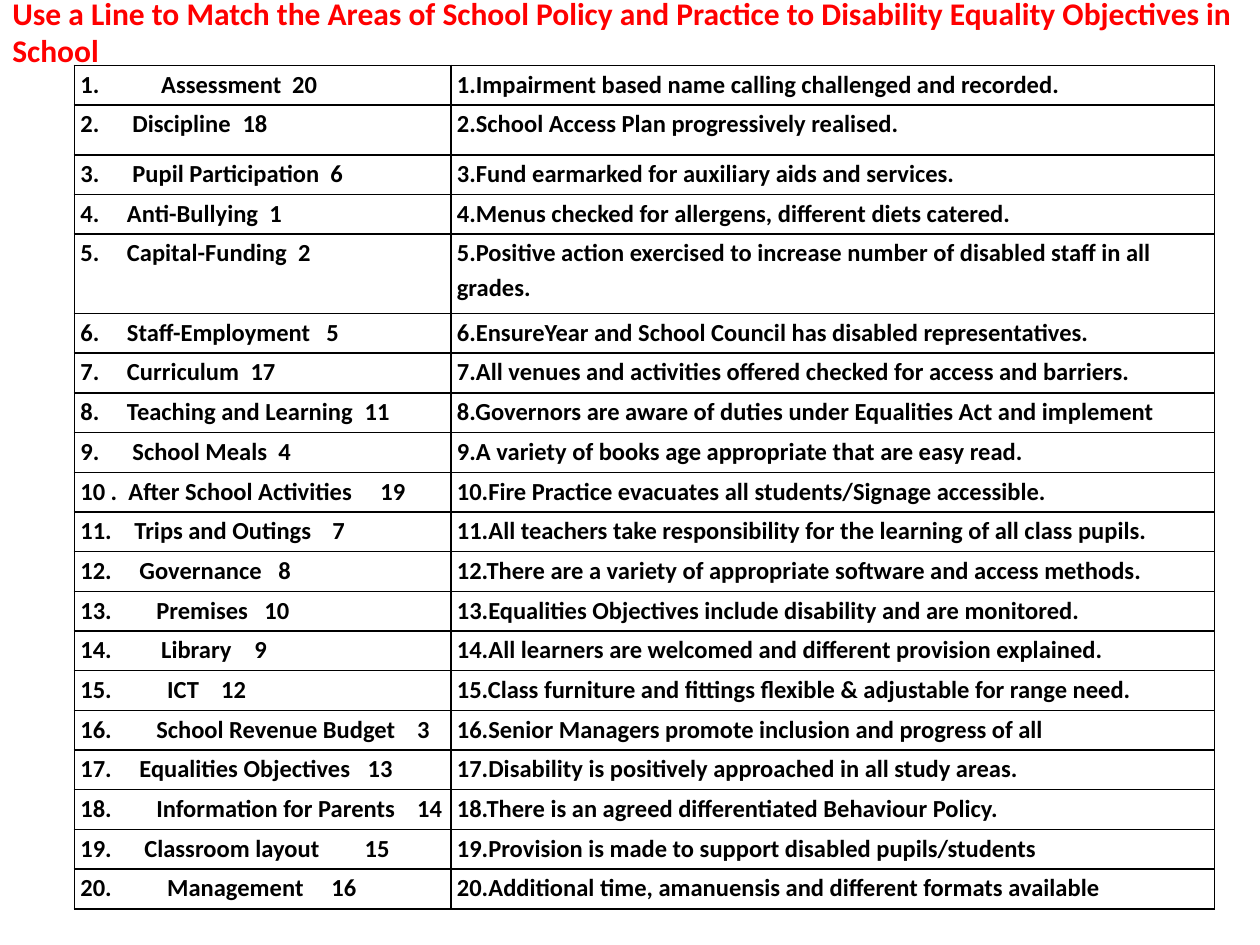
from lxml import etree
from pptx import Presentation
from pptx.dml.color import RGBColor
from pptx.enum.text import MSO_ANCHOR, MSO_AUTO_SIZE
from pptx.oxml.ns import qn
from pptx.util import Cm, Pt

MIDDLE = MSO_ANCHOR.MIDDLE
NO_AUTOFIT = MSO_AUTO_SIZE.NONE

BLACK, RED = "000000", "FF0000"
COLUMN_WIDTHS = (7.59, 15.39)
ROW_HEIGHT = 0.8
TALL_ROWS = {2: 1.0, 5: 1.6}
CELL_FORMAT = {"margin_left": Cm(0.12), "margin_right": Cm(0.12),
               "margin_top": 0, "margin_bottom": 0}
TITLE_FORMAT = {"word_wrap": True, "auto_size": NO_AUTOFIT,
                "vertical_anchor": MIDDLE}

TITLE = ("Use a Line to Match the Areas of School Policy and Practice "
         "to Disability Equality Objectives in School")

# Area, its tab stop, matching objective, its tab stop (cm), objective text
MATCHES = [
    ("Assessment", 1.63, 20, 4.27, "Impairment based name calling challenged and recorded."),
    ("Discipline", 1.05, 18, 3.27, "School Access Plan progressively realised."),
    ("Pupil Participation", 1.05, 6, 5.04, "Fund earmarked for auxiliary aids and services."),
    ("Anti-Bullying", 0.94, 1, 3.81, "Menus checked for allergens, different diets catered."),
    ("Capital-Funding", 0.94, 2, 4.39,
     "Positive action exercised to increase number of disabled staff in all grades."),
    ("Staff-Employment", 0.94, 5, 4.96,
     "EnsureYear and School Council has disabled representatives."),
    ("Curriculum", 0.94, 17, 3.43,
     "All venues and activities offered checked for access and barriers."),
    ("Teaching and Learning", 0.94, 11, 5.73,
     "Governors are aware of duties under Equalities Act and implement"),
    ("School Meals", 1.05, 4, 3.99, "A variety of books age appropriate that are easy read."),
    ("After School Activities", 0.97, 19, 6.05,
     "Fire Practice evacuates all students/Signage accessible."),
    ("Trips and Outings", 1.09, 7, 5.08,
     "All teachers take responsibility for the learning of all class pupils."),
    ("Governance", 1.19, 8, 3.99,
     "There are a variety of appropriate software and access methods."),
    ("Premises", 1.53, 10, 3.71, "Equalities Objectives include disability and are monitored."),
    ("Library", 1.63, 9, 3.51, "All learners are welcomed and different provision explained."),
    ("ICT", 1.75, 12, 2.84,
     "Class furniture and fittings flexible & adjustable for range need."),
    ("School Revenue Budget", 1.53, 3, 6.79,
     "Senior Managers promote inclusion and progress of all"),
    ("Equalities Objectives", 1.19, 13, 5.79,
     "Disability is positively approached in all study areas."),
    ("Information for Parents", 1.53, 14, 6.79,
     "There is an agreed differentiated Behaviour Policy."),
    ("Classroom layout", 1.29, 15, 5.73, "Provision is made to support disabled pupils/students"),
    ("Management", 1.75, 16, 5.06,
     "Additional time, amanuensis and different formats available"),
]


def color(hex_value):
    return RGBColor.from_string(hex_value)


def apply_format(target, values):
    for name, value in values.items():
        setattr(target, name, value)


def write(paragraph, text, size, hex_color):
    run = paragraph.add_run()
    run.text = text
    apply_format(run.font, {"name": "Calibri", "size": Pt(size), "bold": True})
    run.font.color.rgb = color(hex_color)


def set_tabs(paragraph, stops):
    tab_list = etree.SubElement(paragraph._p.get_or_add_pPr(), qn("a:tabLst"))
    for stop in stops:
        etree.SubElement(tab_list, qn("a:tab"), pos=str(Cm(stop)), algn="l")


def set_borders(cell, hex_color):
    properties = cell._tc.get_or_add_tcPr()
    for side in ("lnL", "lnR", "lnT", "lnB"):
        line = etree.SubElement(properties, qn(f"a:{side}"), w=str(Pt(1)))
        fill = etree.SubElement(line, qn("a:solidFill"))
        etree.SubElement(fill, qn("a:srgbClr"), val=hex_color)


def fill_cell(cell, text, stops=()):
    apply_format(cell, CELL_FORMAT)
    set_borders(cell, BLACK)
    cell.fill.background()
    paragraph = cell.text_frame.paragraphs[0]
    paragraph.line_spacing = 1.15
    if stops:
        set_tabs(paragraph, stops)
    write(paragraph, text, 14, BLACK)


def add_matching_table(slide):
    height = ROW_HEIGHT * (len(MATCHES) - len(TALL_ROWS)) + sum(TALL_ROWS.values())
    table = slide.shapes.add_table(len(MATCHES), 2, Cm(1.5), Cm(1.32),
                                   Cm(sum(COLUMN_WIDTHS)), Cm(height)).table
    apply_format(table, {"first_row": False, "horz_banding": False})
    for column, width in zip(table.columns, COLUMN_WIDTHS):
        column.width = Cm(width)
    for number, match in enumerate(MATCHES, 1):
        area, area_stop, answer, answer_stop, objective = match
        row = table.rows[number - 1]
        row.height = Cm(TALL_ROWS.get(number, ROW_HEIGHT))
        label = "10 ." if number == 10 else f"{number}."
        fill_cell(row.cells[0], f"{label}\t{area}\t{answer}", (area_stop, answer_stop))
        fill_cell(row.cells[1], f"{number}.{objective}")


def add_title(slide):
    frame = slide.shapes.add_textbox(0, 0, Cm(25.4), Cm(1.27)).text_frame
    apply_format(frame, TITLE_FORMAT)
    write(frame.paragraphs[0], TITLE, 18, RED)


def main():
    presentation = Presentation()
    apply_format(presentation, {"slide_width": Cm(25.4), "slide_height": Cm(19.05)})
    slide = presentation.slides.add_slide(presentation.slide_layouts[6])
    # Matching grid, then the heading above it
    add_matching_table(slide)
    add_title(slide)
    presentation.save("out.pptx")


if __name__ == "__main__":
    main()
